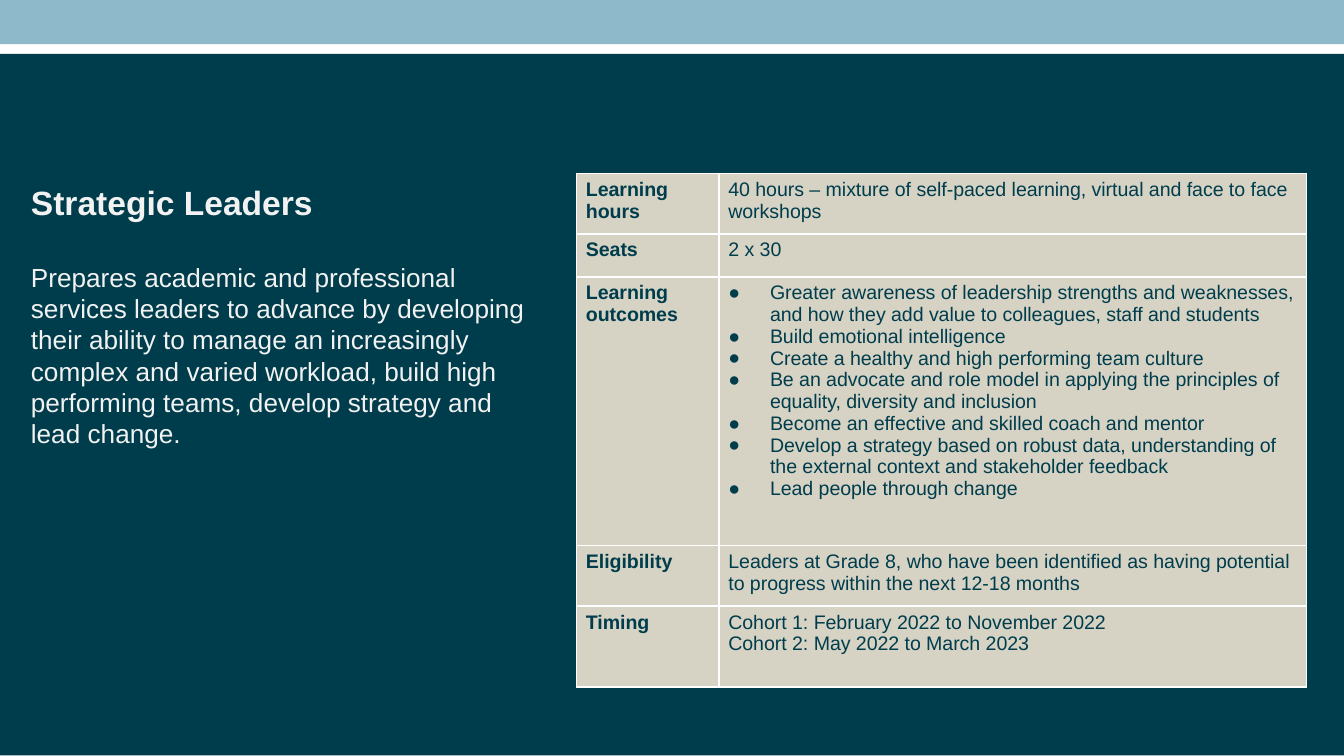
import pptx
import pptx.dml.color
import pptx.enum.shapes
import pptx.enum.text
import pptx.oxml
import pptx.util
import lxml.etree

Inches = pptx.util.Inches
Pt = pptx.util.Pt

NAVY = "003D4C"
SKY = "8DB9CA"
SAND = "D6D2C4"
PALE = "F2F2F2"
WHITE = "FFFFFF"
NS = "http://schemas.openxmlformats.org/drawingml/2006/main"

ROWS = [
    ("Learning hours", 0.45, [
        "40 hours – mixture of self-paced learning, virtual and face to face workshops"]),
    ("Seats", 0.32, ["2 x 30"]),
    ("Learning outcomes", 2, [
        "Greater awareness of leadership strengths and weaknesses, "
        "and how they add value to colleagues, staff and students",
        "Build emotional intelligence",
        "Create a healthy and high performing team culture",
        "Be an advocate and role model in applying the principles of "
        "equality, diversity and inclusion",
        "Become an effective and skilled coach and mentor",
        "Develop a strategy based on robust data, understanding of "
        "the external context and stakeholder feedback",
        "Lead people through change"]),
    ("Eligibility", 0.45, [
        "Leaders at Grade 8, who have been identified as having potential "
        "to progress within the next 12-18 months"]),
    ("Timing", 0.6, [
        "Cohort 1: February 2022 to November 2022",
        "Cohort 2: May 2022 to March 2023"]),
]


def color(code):
    return pptx.dml.color.RGBColor.from_string(code)


def add_run(para, text, size, code, bold=False):
    run = para.add_run()
    run.text = text
    run.font.name = "Arial"
    run.font.size = Pt(size)
    run.font.bold = bold
    run.font.color.rgb = color(code)


def add_band(slide, box, code):
    band = slide.shapes.add_shape(
        pptx.enum.shapes.MSO_SHAPE.RECTANGLE, *map(Inches, box))
    band.shadow.inherit = False
    band.fill.solid()
    band.fill.fore_color.rgb = color(code)
    band.line.fill.background()


def add_bullet(para):
    props = para._p.get_or_add_pPr()
    props.set("marL", str(Inches(0.31)))
    props.set("indent", str(-Inches(0.31)))
    for part in (
            f'<a:buClr xmlns:a="{NS}"><a:srgbClr val="{NAVY}"/></a:buClr>',
            f'<a:buFont xmlns:a="{NS}" typeface="Arial"/>',
            f'<a:buChar xmlns:a="{NS}" char="●"/>'):
        props.append(pptx.oxml.parse_xml(part))


def add_edges(cell):
    props = cell._tc.get_or_add_tcPr()
    for side in ("lnL", "lnR", "lnT", "lnB"):
        line = lxml.etree.SubElement(props, f"{{{NS}}}{side}", w=str(Pt(1)))
        fill = lxml.etree.SubElement(line, f"{{{NS}}}solidFill")
        lxml.etree.SubElement(fill, f"{{{NS}}}srgbClr", val=WHITE)


def fill_cell(cell, lines, bold):
    add_edges(cell)
    cell.fill.solid()
    cell.fill.fore_color.rgb = color(SAND)
    cell.margin_left = cell.margin_right = Inches(0.07)
    cell.margin_top = cell.margin_bottom = Inches(0.04)
    frame = cell.text_frame
    for index, text in enumerate(lines):
        para = frame.add_paragraph() if index else frame.paragraphs[0]
        if len(lines) > 2:
            add_bullet(para)
        add_run(para, text, 10.5, NAVY, bold)


def add_facts(slide, box):
    left, top, width, height = map(Inches, box)
    table = slide.shapes.add_table(
        len(ROWS), 2, left, top, width, height).table
    table.first_row = False
    table.horz_banding = False
    table.columns[0].width = Inches(1.06)
    table.columns[1].width = width - Inches(1.06)
    for index, (label, tall, lines) in enumerate(ROWS):
        table.rows[index].height = Inches(tall)
        fill_cell(table.cell(index, 0), [label], True)
        fill_cell(table.cell(index, 1), lines, False)


def add_intro(slide, box):
    title = slide.shapes.title
    title.left, title.top, title.width, title.height = map(Inches, box)
    tree = title._element.getparent()
    tree.append(title._element)
    frame = title.text_frame
    frame.word_wrap = True
    frame.auto_size = pptx.enum.text.MSO_AUTO_SIZE.NONE
    frame.vertical_anchor = pptx.enum.text.MSO_ANCHOR.TOP
    head = frame.paragraphs[0]
    body = frame.add_paragraph()
    for para in (head, body):
        para.alignment = pptx.enum.text.PP_ALIGN.LEFT
    body.space_before = Pt(21)
    add_run(head, "Strategic Leaders", 18, PALE, True)
    add_run(
        body,
        "Prepares academic and professional services leaders to advance by "
        "developing their ability to manage an increasingly complex and "
        "varied workload, build high performing teams, develop strategy and "
        "lead change.", 14, PALE)


def main():
    deck = pptx.Presentation()
    deck.slide_width = Inches(10)
    deck.slide_height = Inches(10 * 9 / 16)
    slide = deck.slides.add_slide(deck.slide_layouts[5])
    add_band(slide, (0, 0, 10, 0.33), SKY)
    add_band(slide, (0, 0.4, 10, 5.22), NAVY)
    add_facts(slide, (4.29, 1.29, 5.43, 3.82))
    add_intro(slide, (0.13, 1.3, 3.88, 2.42))
    deck.save("out.pptx")


if __name__ == "__main__":
    main()
